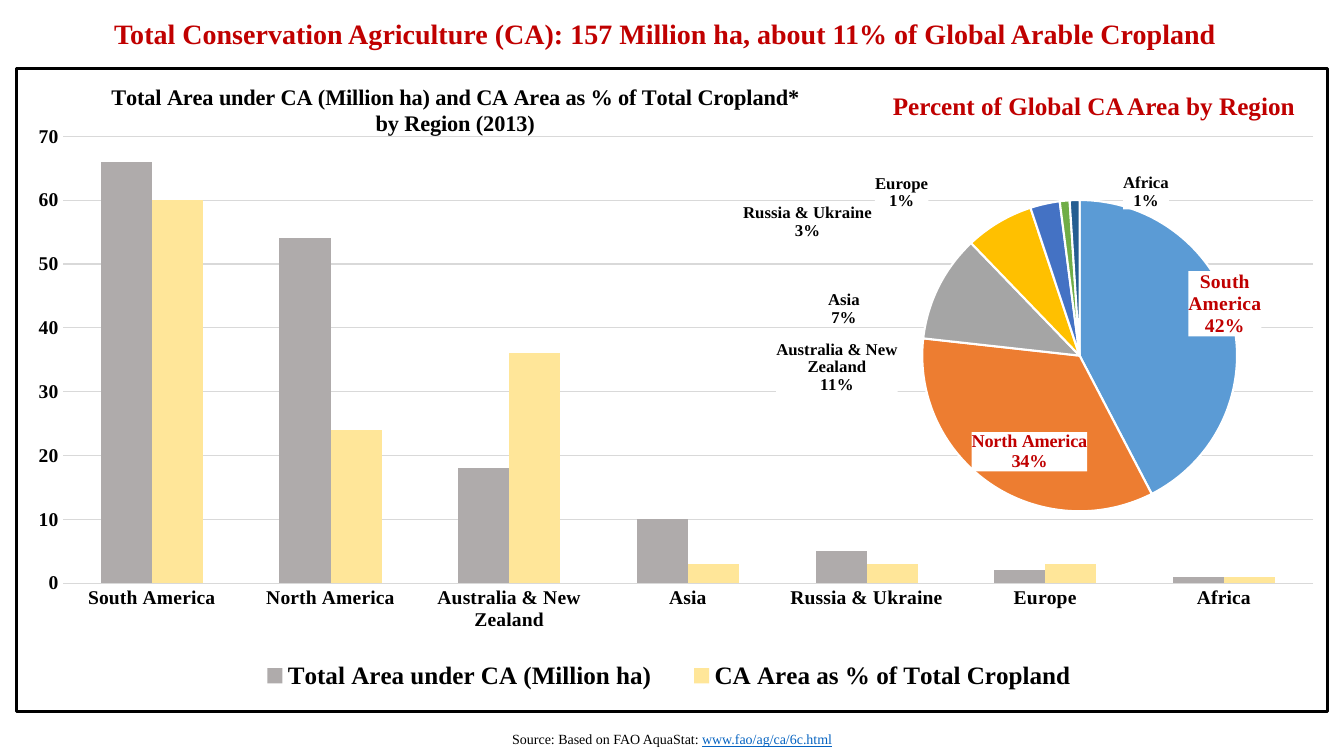
from dataclasses import dataclass

from lxml import etree
from pptx import Presentation
from pptx import util as u
from pptx.chart import data as chart_data
from pptx.dml import color
from pptx.enum import chart as ch
from pptx.enum import text
from pptx.oxml import ns, parse_xml

FONT = "Times New Roman"
COLORS = {
    "black": "000000", "red": "C00000", "link": "0563C1", "grid": "D9D9D9",
    "white": "FFFFFF", "area": "AFABAB", "share": "FFE699",
}
SLICE_COLORS = ["5B9BD5", "ED7D31", "A5A5A5", "FFC000", "4472C4", "70AD47", "255E91"]
NAMESPACES = f'{ns.nsdecls("c")} {ns.nsdecls("a")}'


@dataclass
class Box:
    left: float
    top: float
    width: float
    height: float

    def lengths(self) -> tuple:
        return u.Cm(self.left), u.Cm(self.top), u.Cm(self.width), u.Cm(self.height)


@dataclass
class Run:
    wording: str
    size: float
    color: str
    bold: bool = False
    underline: bool = False


@dataclass
class Region:
    name: str
    area: int
    share: int
    percent: int
    shift_x: float
    shift_y: float
    label_size: int = 12
    label_color: str = "black"


@dataclass
class Caption:
    box: Box
    runs: list
    alignment: text.PP_ALIGN = text.PP_ALIGN.CENTER


REGIONS = [
    Region("South America", 66, 60, 42, -0.07, 0.05, 14, "red"),
    Region("North America", 54, 24, 34, 0.14, -0.15, 13, "red"),
    Region("Australia & New Zealand", 18, 36, 11, -0.05, 0.29),
    Region("Asia", 10, 3, 7, -0.19, 0.29),
    Region("Russia & Ukraine", 5, 3, 3, -0.24, 0.11),
    Region("Europe", 2, 3, 1, -0.19, 0.04),
    Region("Africa", 1, 1, 1, 0.1, 0.04),
]

CAPTIONS = [
    Caption(Box(0.38, 18.29, 33.12, 0.68), [
        Run("Source: Based on FAO AquaStat: ", 10, "black"),
        Run("www.fao/ag/ca/6c.html", 10, "link", underline=True),
    ]),
    Caption(Box(22.25, 2.16, 10.92, 1.02), [
        Run("Percent of Global CA Area by Region", 18, "red", bold=True),
    ], text.PP_ALIGN.LEFT),
    Caption(Box(0.38, 0.28, 32.77, 1.12), [
        Run("Total Conservation Agriculture (CA): 157 Million ha, "
            "about 11% of Global Arable Cropland", 20, "red", bold=True),
    ]),
]


def rgb(name: str) -> color.RGBColor:
    return color.RGBColor.from_string(COLORS.get(name, name))


def style_font(font, size: float, color_name: str, bold: bool = True) -> None:
    font.name = FONT
    font.size = u.Pt(size)
    font.bold = bold
    font.color.rgb = rgb(color_name)


def add_run(paragraph, item: Run) -> None:
    run = paragraph.add_run()
    run.text = item.wording
    style_font(run.font, item.size, item.color, item.bold)
    run.font.underline = item.underline


def add_caption(slide, caption: Caption) -> None:
    frame = slide.shapes.add_textbox(*caption.box.lengths()).text_frame
    frame.word_wrap = True
    frame.auto_size = text.MSO_AUTO_SIZE.SHAPE_TO_FIT_TEXT
    paragraph = frame.paragraphs[0]
    paragraph.alignment = caption.alignment
    for item in caption.runs:
        add_run(paragraph, item)


def place(parent, index: int, inner: bool = False, **fractions: float) -> None:
    for old in parent.findall(ns.qn("c:layout")):
        parent.remove(old)
    target = '<c:layoutTarget val="inner"/>' if inner else ""
    modes = "".join(f'<c:{key}Mode val="edge"/>' for key in "xy")
    values = "".join(f'<c:{key} val="{value}"/>' for key, value in fractions.items())
    parent.insert(index, parse_xml(
        f"<c:layout {NAMESPACES}><c:manualLayout>{target}{modes}{values}"
        "</c:manualLayout></c:layout>"))


def frame_chart(chart, fill: str, line: str) -> None:
    area = chart.element.find(ns.qn("c:chart"))
    area.addnext(parse_xml(f"<c:spPr {NAMESPACES}>{fill}{line}</c:spPr>"))


def solid(name: str) -> str:
    return f'<a:solidFill><a:srgbClr val="{COLORS[name]}"/></a:solidFill>'


def add_column_chart(slide, box: Box) -> None:
    source = chart_data.CategoryChartData()
    source.categories = [region.name for region in REGIONS]
    source.add_series("Total Area under CA (Million ha) ", [region.area for region in REGIONS])
    source.add_series("CA Area as % of Total Cropland ", [region.share for region in REGIONS])
    chart = slide.shapes.add_chart(
        ch.XL_CHART_TYPE.COLUMN_CLUSTERED, *box.lengths(), source).chart
    style_font(chart.font, 14, "black")
    frame_chart(chart, solid("white"), f'<a:ln w="28575">{solid("black")}</a:ln>')

    plot = chart.plots[0]
    plot.gap_width, plot.overlap, plot.vary_by_categories = 150, 0, False
    for series, name in zip(plot.series, ("area", "share")):
        series.format.fill.solid()
        series.format.fill.fore_color.rgb = rgb(name)
    for axis in (chart.category_axis, chart.value_axis):
        axis.major_tick_mark = axis.minor_tick_mark = ch.XL_TICK_MARK.NONE
        axis.format.line.fill.background()
        style_font(axis.tick_labels.font, 14, "black")
    axis = chart.value_axis
    axis.minimum_scale, axis.maximum_scale, axis.major_unit = 0, 70, 10
    axis.major_gridlines.format.line.color.rgb = rgb("grid")
    axis.major_gridlines.format.line.width = u.Pt(0.75)

    frame = chart.chart_title.text_frame
    add_run(frame.paragraphs[0], Run(
        "Total Area under CA (Million ha) and CA Area as % of Total Cropland*", 16, "black", True))
    add_run(frame.add_paragraph(), Run("by Region (2013)", 16, "black", True))
    chart.chart_title.include_in_layout = False
    chart.has_legend = True
    chart.legend.position = ch.XL_LEGEND_POSITION.BOTTOM
    chart.legend.include_in_layout = False
    style_font(chart.legend.font, 18, "black")
    place(chart.element.find(".//" + ns.qn("c:title")), 1, x=0.07, y=0.02)
    place(chart.element.find(".//" + ns.qn("c:legend")), 1, x=0.17, y=0.91, w=0.66, h=0.07)
    place(chart.element.find(".//" + ns.qn("c:plotArea")), 0, inner=True,
          x=0.035, y=0.106, w=0.954, h=0.695)


def label_xml(index: int, region: Region) -> str:
    return (
        f'<c:dLbl><c:idx val="{index}"/><c:layout><c:manualLayout>'
        f'<c:x val="{region.shift_x}"/><c:y val="{region.shift_y}"/></c:manualLayout></c:layout>'
        f'<c:spPr>{solid("white")}<a:ln><a:noFill/></a:ln></c:spPr>'
        f'<c:txPr><a:bodyPr/><a:p><a:pPr><a:defRPr sz="{region.label_size * 100}" b="1">'
        f'{solid(region.label_color)}<a:latin typeface="{FONT}"/></a:defRPr></a:pPr>'
        f'<a:endParaRPr lang="en-US"/></a:p></c:txPr>{label_content()}</c:dLbl>')


def label_content() -> str:
    shown = {"LegendKey": 0, "Val": 0, "CatName": 1, "SerName": 0, "Percent": 1, "BubbleSize": 0}
    flags = "".join(f'<c:show{key} val="{value}"/>' for key, value in shown.items())
    return f'<c:dLblPos val="outEnd"/>{flags}<c:separator>\n</c:separator>'


def add_pie_chart(slide, box: Box) -> None:
    source = chart_data.CategoryChartData()
    source.categories = [region.name for region in REGIONS]
    source.add_series("Series 1", [region.percent for region in REGIONS])
    chart = slide.shapes.add_chart(ch.XL_CHART_TYPE.PIE, *box.lengths(), source).chart
    chart.has_title = chart.has_legend = False
    style_font(chart.font, 12, "black")
    frame_chart(chart, "<a:noFill/>", "<a:ln><a:noFill/></a:ln>")
    for index, name in enumerate(SLICE_COLORS):
        piece = chart.plots[0].series[0].points[index].format
        piece.fill.solid()
        piece.fill.fore_color.rgb = rgb(name)
        piece.line.color.rgb = rgb("white")
        piece.line.width = u.Pt(1.5)
    labels = "".join(label_xml(index, region) for index, region in enumerate(REGIONS))
    categories: etree.ElementBase = chart.element.find(".//" + ns.qn("c:cat"))
    categories.addprevious(parse_xml(
        f"<c:dLbls {NAMESPACES}>{labels}{label_content()}"
        '<c:showLeaderLines val="0"/></c:dLbls>'))
    place(chart.element.find(".//" + ns.qn("c:plotArea")), 0, inner=True,
          x=0.42, y=0.14, w=0.44, h=0.83)


def main() -> None:
    presentation = Presentation()
    presentation.slide_width, presentation.slide_height = u.Cm(33.87), u.Cm(19.05)
    slide = presentation.slides.add_slide(presentation.slide_layouts[6])
    add_column_chart(slide, Box(0.38, 1.68, 33.12, 16.28))
    add_pie_chart(slide, Box(15.67, 3.68, 18.03, 9.63))
    for caption in CAPTIONS:
        add_caption(slide, caption)
    presentation.save("out.pptx")


if __name__ == "__main__":
    main()
